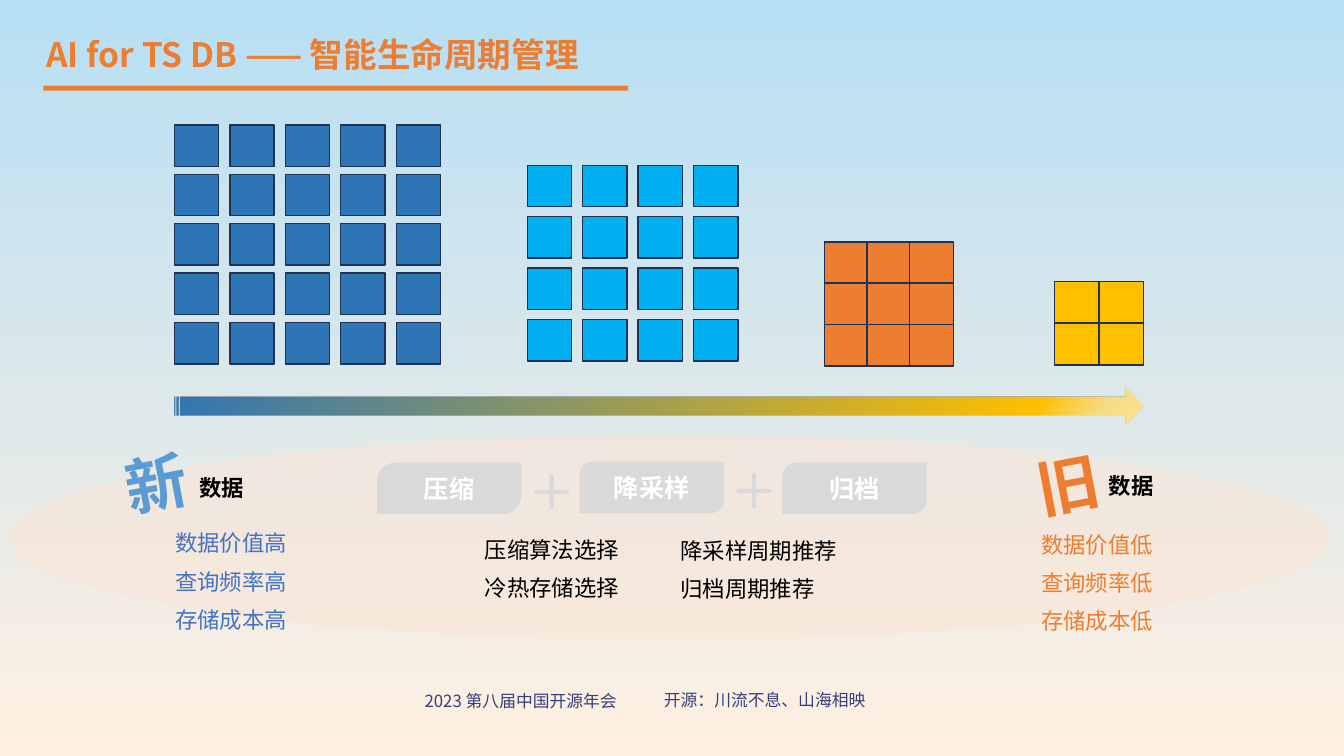
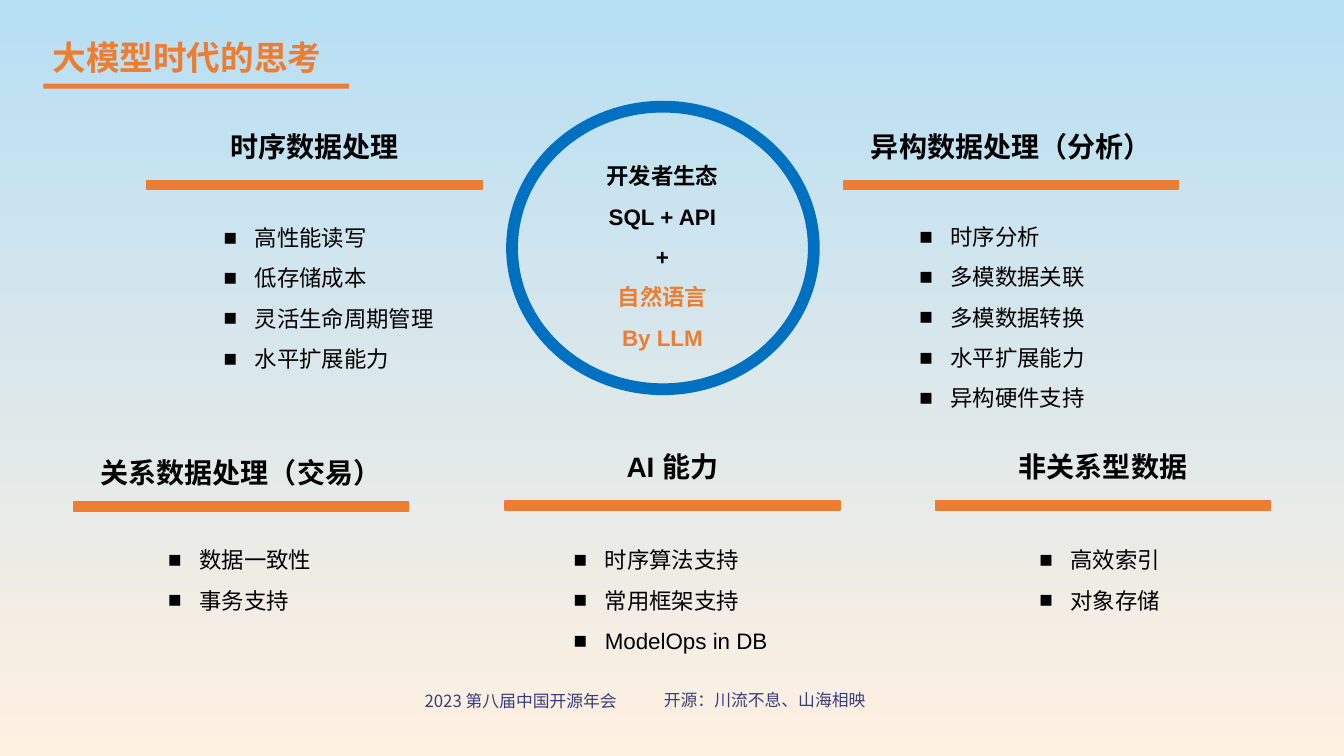
from lxml.etree import SubElement
from pptx import Presentation
from pptx.dml.color import RGBColor as RGB
from pptx.enum.shapes import MSO_SHAPE as Kind
from pptx.enum.text import MSO_ANCHOR as Anchor, MSO_AUTO_SIZE as Fit, PP_ALIGN as Align
from pptx.oxml.ns import qn
from pptx.util import Pt

PX = 9144  # EMU in one px, 100 px to the inch
NOTO, ARIAL = "Noto Sans CJK SC", "Arial"

BLACK = RGB(0x00, 0x00, 0x00)
WHITE = RGB(0xFF, 0xFF, 0xFF)
ORANGE = RGB(0xED, 0x7D, 0x31)
NAVY = RGB(0x36, 0x3E, 0x7D)
EDGE = RGB(0x1E, 0x32, 0x56)
BLUE = RGB(0x2E, 0x75, 0xB6)
CYAN = RGB(0x00, 0xB0, 0xF0)
GOLD = RGB(0xFF, 0xC0, 0x00)
SAND = RGB(0xFF, 0xD9, 0x66)
CREAM = RGB(0xFF, 0xE6, 0x99)
GREY = RGB(0xD9, 0xD9, 0xD9)
PEACH = RGB(0xFB, 0xE5, 0xD6)
RING = RGB(0x00, 0x70, 0xC0)
COOL = RGB(0x44, 0x72, 0xC4)
FRESH = RGB(0x5B, 0x9B, 0xD5)
SKY = RGB(0xB7, 0xDF, 0xF4)
DAWN = RGB(0xFF, 0xF0, 0xE1)

FEET = [((379, 680, 275, 30), "2023 第八届中国开源年会"),
        ((638, 679, 241, 30), "开源：川流不息、山海相映")]


def fade(node, percent):
    """Set the opacity of a colour element."""
    SubElement(node, qn("a:alpha")).set("val", str(percent * 1000))


def blend(fill, root, angle, stops):
    """Fill with (place, colour, opacity) stops; the angle runs clockwise."""
    fill.gradient()
    fill.gradient_angle = 360 - angle
    row = next(root.iter(qn("a:gsLst")))
    for old in list(row):
        row.remove(old)
    for place, color, percent in stops:
        stop = SubElement(row, qn("a:gs"), pos=str(place * 1000))
        tone = SubElement(stop, qn("a:srgbClr"), val=str(color))
        if percent < 100:
            fade(tone, percent)


def bullet(para, indent):
    props = para._p.get_or_add_pPr()
    props.set("marL", str(indent * PX))
    props.set("indent", str(-indent * PX))
    SubElement(props, qn("a:buFont"), typeface=ARIAL)
    SubElement(props, qn("a:buChar"), char="■")


def write(frame, text, size=16, color=BLACK, face=ARIAL, bold=False,
          align=Align.LEFT, anchor=Anchor.TOP, wrap=True, lead=None,
          gap=0, dots=False, tint=None):
    """Write lines of text; tint maps a line number to its own colour."""
    frame.word_wrap = wrap
    frame.auto_size = Fit.NONE
    frame.vertical_anchor = anchor
    for i, line in enumerate(text.split("\n")):
        para = frame.add_paragraph() if i else frame.paragraphs[0]
        if dots:
            bullet(para, 31)
        para.alignment = align
        if lead:
            para.line_spacing = Pt(lead)
        if i and gap:
            para.space_before = Pt(gap)
        run = para.add_run()
        run.text = line
        font = run.font
        font.size, font.bold, font.name = Pt(size), bold, face
        font.color.rgb = (tint or {}).get(i, color)
        SubElement(run._r.get_or_add_rPr(), qn("a:ea"), typeface=NOTO)


class Deck:
    def __init__(self):
        self.prs = Presentation()
        self.prs.slide_width, self.prs.slide_height = 1333 * PX, 750 * PX
        self.slide = None
        master = self.prs.slide_master
        blend(master.background.fill, master.element, 90,
              [(0, SKY, 100), (100, DAWN, 100)])

    def page(self, title, box, bar, face):
        """Start a slide with its title, title bar and footer."""
        self.slide = self.prs.slides.add_slide(self.prs.slide_layouts[5])
        head = self.slide.shapes.title
        head.left, head.top, head.width, head.height = (n * PX for n in box)
        write(head.text_frame, title, size=24, color=ORANGE, face=face,
              bold=True, anchor=Anchor.MIDDLE)
        self.shape(Kind.RECTANGLE, bar, ORANGE)
        for spot, note in FEET:
            self.text(spot, note, size=12, color=NAVY, face=NOTO,
                      align=Align.CENTER, anchor=Anchor.MIDDLE)

    def text(self, box, text, **style):
        area = self.slide.shapes.add_textbox(*(n * PX for n in box))
        write(area.text_frame, text, **style)
        return area

    def shape(self, kind, box, color, line=None, adj=()):
        item = self.slide.shapes.add_shape(kind, *(n * PX for n in box))
        item.shadow.inherit = False
        item.fill.solid()
        item.fill.fore_color.rgb = color
        if line is None:
            item.line.fill.background()
        else:
            item.line.color.rgb = line
            item.line.width = Pt(1)
        for i, value in enumerate(adj):
            item.adjustments[i] = value
        return item

    def grid(self, left, top, count, step, drop, color):
        """Draw a count by count block of cells."""
        for row in range(count):
            for col in range(count):
                self.shape(Kind.RECTANGLE,
                           (left + col * step, top + row * drop, 44, 41),
                           color, line=EDGE)

    def topic(self, left, top, bar, head, face, spot, points, font):
        """Draw a heading, its bar and its bulleted points."""
        self.text((left, top, 332, 44), head, size=20, face=face, bold=True,
                  align=Align.CENTER, anchor=Anchor.MIDDLE)
        self.shape(Kind.RECTANGLE, (left, bar, 332, 9), ORANGE, line=ORANGE)
        tall = 10 + 40 * len(points.split("\n"))
        self.text((*spot, 250, tall), points, face=font, lead=28.8, dots=True)


def cycle(deck):
    deck.page("AI for TS DB —— 智能生命周期管理", (36, 29, 620, 50),
              (43, 85, 580, 5), NOTO)
    glow = deck.shape(Kind.OVAL, (8, 431, 1311, 204), PEACH)
    fade(next(glow.element.spPr.iter(qn("a:srgbClr"))), 55)

    for block in [(173, 124, 5, 55, 49, BLUE), (523, 164, 4, 55, 51, CYAN),
                  (818, 240, 3, 42, 41, ORANGE), (1046, 279, 2, 44, 42, GOLD)]:
        deck.grid(*block)
    arrow = deck.shape(Kind.STRIPED_RIGHT_ARROW, (173, 385, 961, 36), BLUE)
    blend(arrow.fill, arrow.element, 40,
          [(0, BLUE, 100), (88, GOLD, 100), (95, SAND, 73), (100, CREAM, 100)])

    for box, note, color in [
            ((164, 523, 190, 142), "数据价值高\n查询频率高\n存储成本高", COOL),
            ((1023, 524, 190, 142), "数据价值低\n查询频率低\n存储成本低", ORANGE),
            ((471, 529, 207, 99), "压缩算法选择\n冷热存储选择", BLACK),
            ((665, 530, 282, 99), "降采样周期推荐\n归档周期推荐", BLACK)]:
        deck.text(box, note, color=color, lead=17.4, gap=10)

    for left, top, word, color, side in [(114, 437, "新", FRESH, (188, 468)),
                                         (1018, 438, "旧", ORANGE, (1090, 466))]:
        mark = deck.text((left, top, 82, 84), word, size=44, color=color,
                         face=NOTO, bold=True, align=Align.CENTER,
                         anchor=Anchor.MIDDLE, wrap=False)
        mark.rotation = 349.2
        deck.text((*side, 148, 52), "数据", bold=True, lead=17.4)

    for left, top, step, bend in [(374, 459, "压缩", 0.35),
                                  (575, 458, "降采样", 0.24),
                                  (776, 459, "归档", 0.28)]:
        tag = deck.shape(Kind.ROUND_2_DIAG_RECTANGLE, (left, top, 143, 51),
                         GREY, adj=(bend, 0))
        write(tag.text_frame, step, size=18, color=WHITE, face=NOTO, bold=True,
              align=Align.CENTER, anchor=Anchor.MIDDLE)
    for left, top in [(530, 471), (731, 470)]:
        deck.shape(Kind.CROSS, (left, top, 34, 34), GREY, adj=(0.44,))


def models(deck):
    deck.page("大模型时代的思考", (42, 32, 320, 50), (43, 83, 303, 5), ARIAL)
    for part in [
            (146, 123, 179, "时序数据处理", NOTO, (212, 204),
             "高性能读写\n低存储成本\n灵活生命周期管理\n水平扩展能力", ARIAL),
            (837, 123, 179, "异构数据处理（分析）", NOTO, (902, 203),
             "时序分析\n多模数据关联\n多模数据转换\n水平扩展能力\n异构硬件支持", NOTO),
            (73, 447, 498, "关系数据处理（交易）", ARIAL, (157, 524),
             "数据一致性\n事务支持", NOTO),
            (501, 441, 497, "AI 能力", ARIAL, (559, 524),
             "时序算法支持\n常用框架支持\nModelOps in DB", ARIAL),
            (928, 441, 497, "非关系型数据", NOTO, (1021, 524),
             "高效索引\n对象存储", NOTO)]:
        deck.topic(*part)
    deck.text((577, 143, 160, 207), "开发者生态\nSQL + API\n+\n自然语言\nBy LLM",
              bold=True, align=Align.CENTER, lead=28.8,
              tint={3: ORANGE, 4: ORANGE})
    deck.shape(Kind.DONUT, (502, 100, 311, 292), RING, adj=(0.04,))


def main():
    deck = Deck()
    cycle(deck)
    models(deck)
    deck.prs.save("out.pptx")


if __name__ == "__main__":
    main()
